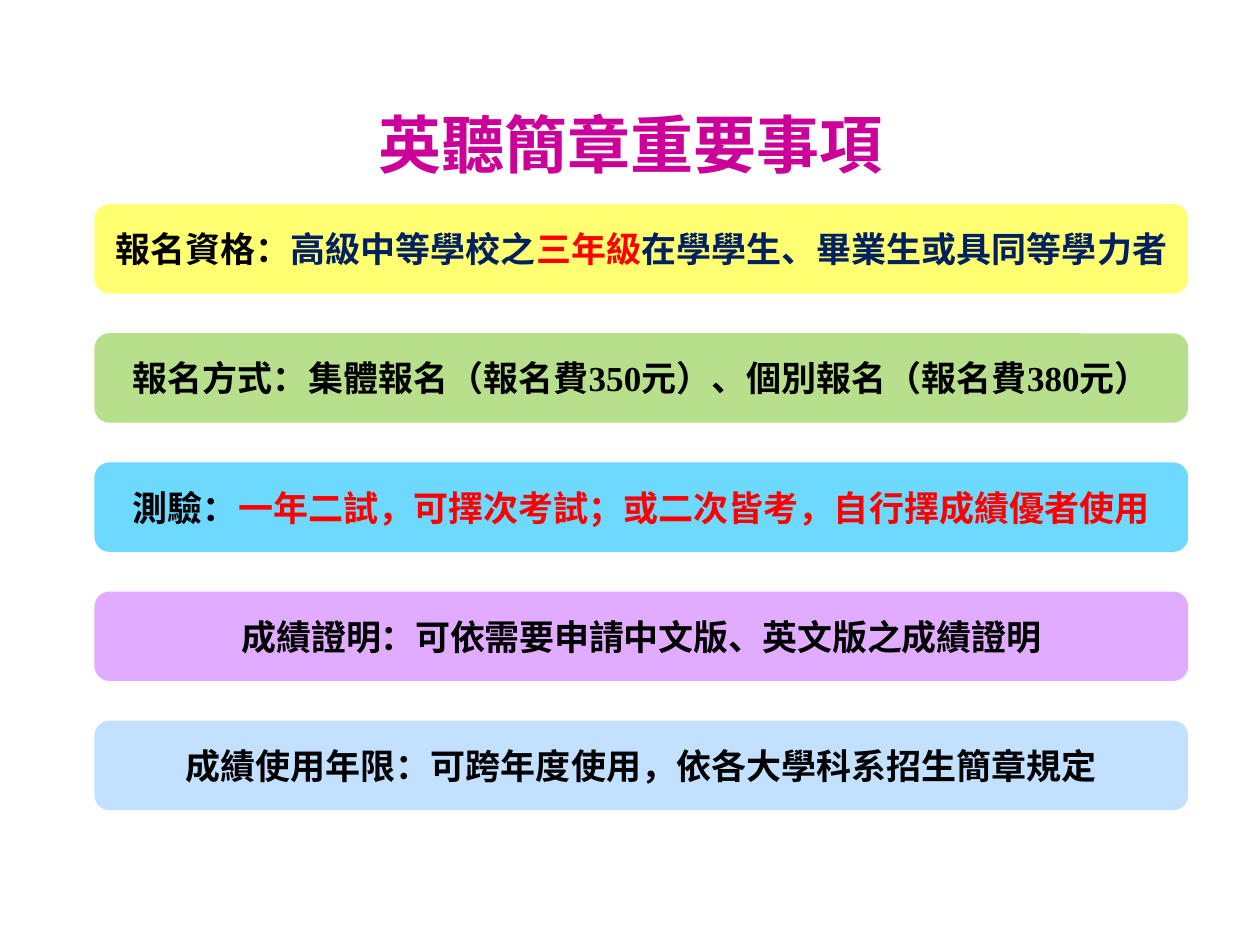
from dataclasses import dataclass

from lxml import etree
from pptx import Presentation
from pptx.dml.color import RGBColor
from pptx.enum import shapes, text
from pptx.oxml import ns
from pptx.util import Inches, Pt


@dataclass(frozen=True)
class Theme:
    """Colours, fonts and type sizes of the slide."""
    title: str = "CC0099"
    ink: str = "000000"
    navy: str = "002060"
    red: str = "FF0000"
    bars: tuple = ("FFFF71", "B8E08C", "6DD9FF", "E1ABFF", "C2E0FF")
    latin: str = "Times New Roman"
    cjk: str = "Noto Sans CJK SC"
    title_size: int = 36
    body_size: int = 20


THEME = Theme()
TITLE = "英聽簡章重要事項"
ITEMS = [
    [("報名資格：", {}), ("高級中等學校之", {"color": THEME.navy}),
     ("三年級", {"color": THEME.red}),
     ("在學學生、畢業生或具同等學力者", {"color": THEME.navy})],
    [("報名方式：集體報名（報名費350元）、個別報名（報名費380元）", {})],
    [("測驗：", {}),
     ("一年二試，可擇次考試；或二次皆考，自行擇成績優者使用", {"color": THEME.red})],
    [("成績證明：可依需要申請中文版、英文版之成績證明", {"spacing": -0.2})],
    [("成績使用年限：可跨年度使用，依各大學科系招生簡章規定", {})],
]


def add_run(p, content, size=THEME.body_size, color=THEME.ink,
            latin=THEME.latin, bold=True, spacing=0):
    """Append a formatted run to a paragraph."""
    r = p.add_run()
    r.text = content
    r.font.size = Pt(size)
    r.font.bold = bold
    r.font.color.rgb = RGBColor.from_string(color)
    r.font.name = latin
    rPr = r.font._element
    etree.SubElement(rPr, ns.qn("a:ea")).set("typeface", THEME.cjk)
    if spacing:
        rPr.set("spc", str(round(spacing * 100)))


def centre(tf):
    """Centre a text frame both ways and return its first paragraph."""
    tf.word_wrap = True
    tf.vertical_anchor = text.MSO_ANCHOR.MIDDLE
    p = tf.paragraphs[0]
    p.alignment = text.PP_ALIGN.CENTER
    return p


def add_title(s, left, top, width, height):
    """Place the slide title in the given box."""
    sp = s.shapes.title
    sp.left, sp.top, sp.width, sp.height = left, top, width, height
    add_run(centre(sp.text_frame), TITLE, size=THEME.title_size,
            color=THEME.title, latin=THEME.cjk)


def add_bar(s, runs, fill, left, top, width, height):
    """Place one rounded bar holding a line of runs."""
    sp = s.shapes.add_shape(shapes.MSO_SHAPE.ROUNDED_RECTANGLE,
                            left, top, width, height)
    sp.shadow.inherit = False
    sp.fill.solid()
    sp.fill.fore_color.rgb = RGBColor.from_string(fill)
    sp.line.fill.background()
    p = centre(sp.text_frame)
    for content, style in runs:
        add_run(p, content, **style)


def add_bars(s, left, top, width, height, bar_height):
    """Spread the bars evenly over the given box."""
    pitch = (height - bar_height) / (len(ITEMS) - 1)
    for i, (runs, fill) in enumerate(zip(ITEMS, THEME.bars)):
        add_bar(s, runs, fill, left, round(top + i * pitch), width, bar_height)


def main():
    """Build and save the slide."""
    prs = Presentation()
    prs.slide_width, prs.slide_height = Inches(10), Inches(7.5)
    s = prs.slides.add_slide(prs.slide_layouts[5])
    add_bars(s, Inches(0.75), Inches(1.62), Inches(8.68), Inches(4.81),
             bar_height=Inches(0.71))
    add_title(s, Inches(0.75), Inches(0.76), Inches(8.5), Inches(0.75))
    prs.save("out.pptx")


if __name__ == "__main__":
    main()
